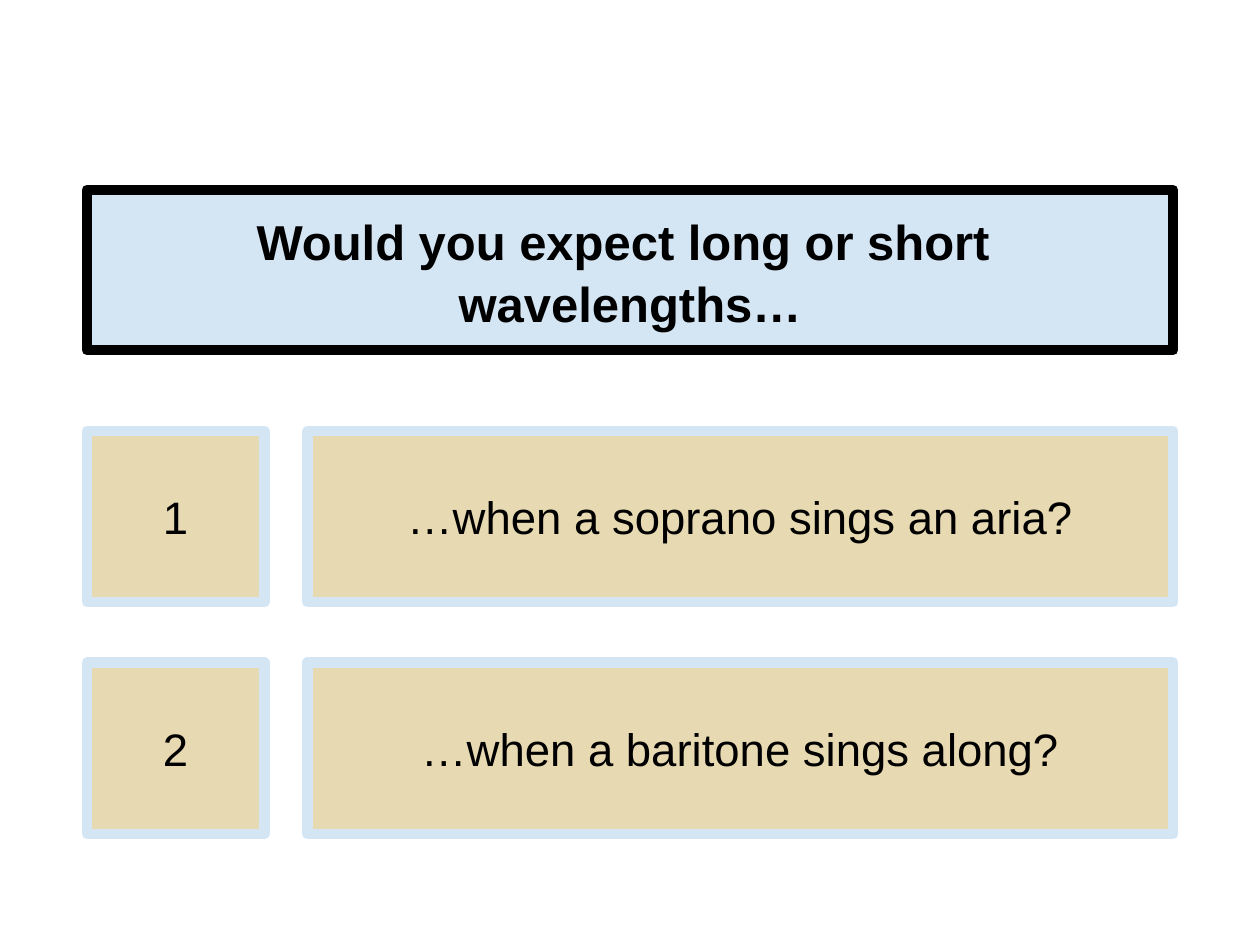
from lxml import etree
from pptx import Presentation
from pptx.dml.color import RGBColor
from pptx.enum.text import MSO_ANCHOR, MSO_AUTO_SIZE, PP_ALIGN
from pptx.oxml.ns import qn
from pptx.util import Cm, Pt

MIDDLE = MSO_ANCHOR.MIDDLE
NO_AUTOFIT = MSO_AUTO_SIZE.NONE
CENTER = PP_ALIGN.CENTER

TITLE = "Would you expect long or short \vwavelengths…"
QUESTIONS = ["…when a soprano sings an aria?", "…when a baritone sings along?"]

FONT = "Arial"
BLACK, PALE_BLUE, SAND = "000000", "D4E5F4", "E7D9B1"
COMPARISON_LAYOUT = 4

LEFT, WIDTH = 1.75, 21.9
TITLE_TOP, TITLE_HEIGHT = 3.83, 3.23
NUMBER_WIDTH, COLUMN_GAP = 3.58, 0.87
ROW_TOP, ROW_HEIGHT, ROW_PITCH = 8.69, 3.45, 4.67


def color(value):
    return RGBColor.from_string(value)


def fill_box(shape, text, box, fill, border, size, bold=False):
    shape.left, shape.top, shape.width, shape.height = map(Cm, box)
    shape.fill.solid()
    shape.fill.fore_color.rgb = color(fill)
    shape.line.color.rgb = color(border)
    shape.line.width = Pt(6)

    frame = shape.text_frame
    frame.text = text
    frame.word_wrap = True
    frame.auto_size = NO_AUTOFIT
    frame.vertical_anchor = MIDDLE
    paragraph = frame.paragraphs[0]
    paragraph.alignment = CENTER
    properties = paragraph._p.get_or_add_pPr()
    properties.set("marL", "0")
    properties.set("indent", "0")
    etree.SubElement(properties, qn("a:buNone"))
    for run in paragraph.runs:
        run.font.name = FONT
        run.font.size = Pt(size)
        run.font.bold = bold
        run.font.color.rgb = color(BLACK)


def main():
    """Build a title box above numbered question rows."""
    presentation = Presentation()
    presentation.slide_width, presentation.slide_height = Cm(25.4), Cm(19.05)
    slide = presentation.slides.add_slide(presentation.slide_layouts[COMPARISON_LAYOUT])

    title = slide.shapes.title
    fill_box(title, TITLE, (LEFT, TITLE_TOP, WIDTH, TITLE_HEIGHT), PALE_BLUE, BLACK, 28, True)
    title.text_frame.paragraphs[0].line_spacing = 1.05

    question_left = LEFT + NUMBER_WIDTH + COLUMN_GAP
    question_width = LEFT + WIDTH - question_left
    bodies = iter(list(slide.placeholders)[1:])
    for row, question in enumerate(QUESTIONS):
        top = ROW_TOP + row * ROW_PITCH
        cells = [(str(row + 1), LEFT, NUMBER_WIDTH), (question, question_left, question_width)]
        for text, left, width in cells:
            fill_box(next(bodies), text, (left, top, width, ROW_HEIGHT), SAND, PALE_BLUE, 26)

    presentation.save("out.pptx")


if __name__ == "__main__":
    main()
